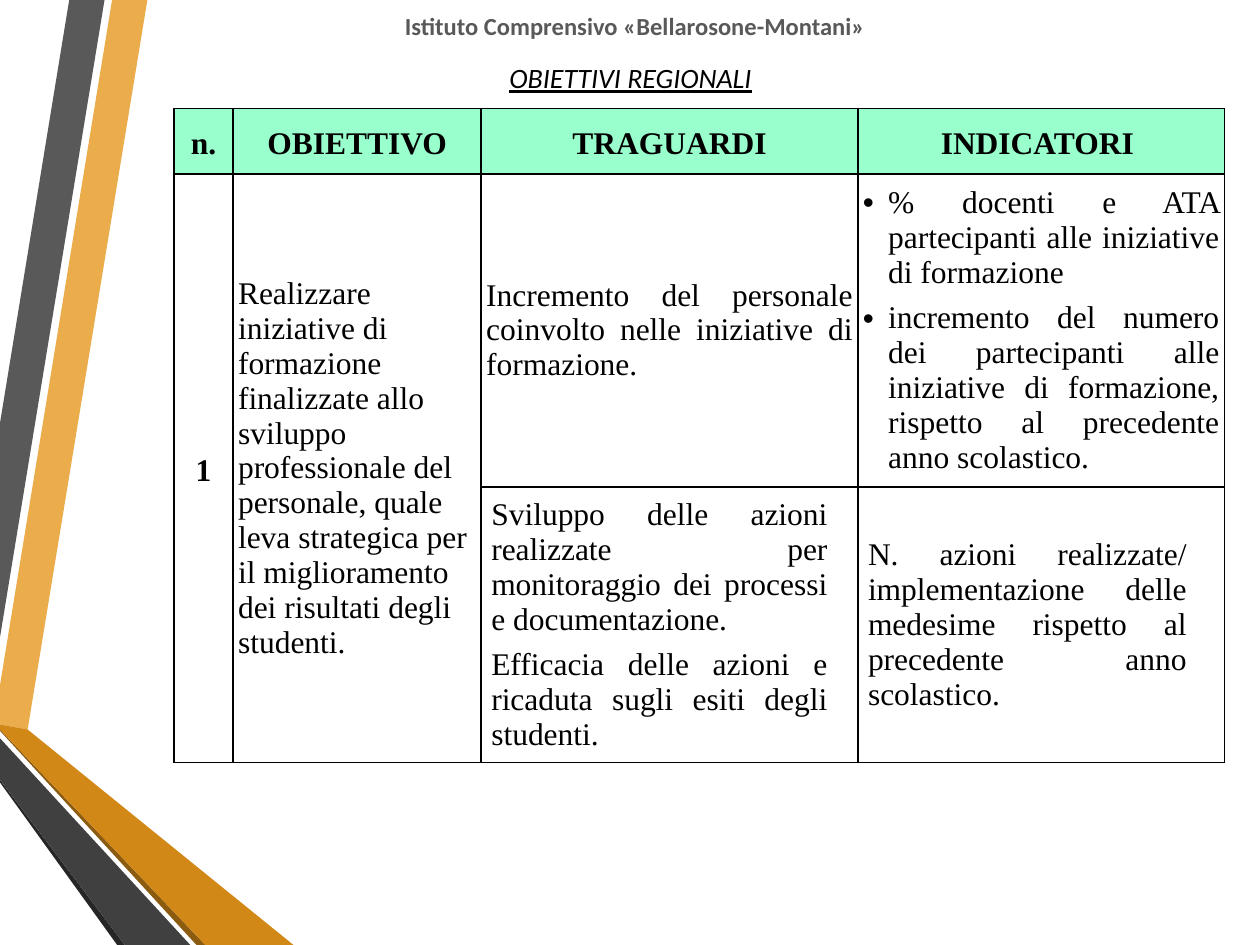
"""Builds the slide with the regional objectives, their targets and indicators."""
import pptx
import pptx.dml.color
import pptx.enum.text
import pptx.oxml
import pptx.oxml.ns
import pptx.util
from lxml import etree

Inches, Pt = pptx.util.Inches, pptx.util.Pt
RGBColor = pptx.dml.color.RGBColor
PP_ALIGN, MSO_ANCHOR = pptx.enum.text.PP_ALIGN, pptx.enum.text.MSO_ANCHOR

BLACK = RGBColor(0x00, 0x00, 0x00)
WHITE = RGBColor(0xFF, 0xFF, 0xFF)
MINT = RGBColor(0x99, 0xFF, 0xCC)
GREY = RGBColor(0x59, 0x59, 0x59)
CHARCOAL = RGBColor(0x40, 0x40, 0x40)
DARK_CHARCOAL = RGBColor(0x26, 0x26, 0x26)
LIGHT_ORANGE = RGBColor(0xEB, 0xAC, 0x4B)
ORANGE = RGBColor(0xD1, 0x88, 0x17)
BROWN = RGBColor(0x8B, 0x5B, 0x10)


def add_run(paragraph, text, font_name, size, color, bold=False):
    run = paragraph.add_run()
    run.text = text
    run.font.name = font_name
    run.font.size = Pt(size)
    run.font.color.rgb = color
    run.font.bold = bold
    return run


def add_borders(cell):
    properties = cell._tc.get_or_add_tcPr()
    for index, side in enumerate(("lnL", "lnR", "lnT", "lnB")):
        border = pptx.oxml.parse_xml(
            f'<a:{side} xmlns:a="http://schemas.openxmlformats.org/drawingml/2006/main" w="{Pt(1)}">'
            f'<a:solidFill><a:srgbClr val="{BLACK}"/></a:solidFill></a:{side}>')
        properties.insert(index, border)


presentation = pptx.Presentation()
presentation.slide_width, presentation.slide_height = Inches(10), Inches(7.5)
slide = presentation.slides.add_slide(presentation.slide_layouts[5])

ribbons = [
    (LIGHT_ORANGE, [(0, 5.44), (0, 5.75), (0.22, 5.79), (1.17, 0), (0.89, 0)]),
    (GREY, [(0.83, 0), (0.55, 0), (0, 3.36), (0, 5.06)]),
    (DARK_CHARCOAL, [(0, 6.19), (0, 6.21), (0.93, 7.5), (0.99, 7.5)]),
    (BROWN, [(0, 5.79), (0, 5.8), (1.56, 7.5), (1.63, 7.5)]),
    (ORANGE, [(0, 5.79), (1.63, 7.5), (2.33, 7.5), (0.22, 5.79), (0, 5.75)]),
    (CHARCOAL, [(0, 6.19), (0.99, 7.5), (1.51, 7.5), (0, 5.86)]),
]
for color, corners in ribbons:
    points = [(Inches(x), Inches(y)) for x, y in corners]
    builder = slide.shapes.build_freeform(*points[0])
    builder.add_line_segments(points[1:], close=True)
    ribbon = builder.convert_to_shape()
    ribbon.shadow.inherit = False
    ribbon.fill.solid()
    ribbon.fill.fore_color.rgb = color
    ribbon.line.fill.background()

title = slide.shapes.title
title.left, title.top, title.width, title.height = Inches(0.91), Inches(0.43), Inches(8.19), Inches(0.37)
title.text_frame.auto_size = pptx.enum.text.MSO_AUTO_SIZE.NONE
title.text_frame.vertical_anchor = MSO_ANCHOR.TOP
title_line = title.text_frame.paragraphs[0]
title_line.alignment = PP_ALIGN.CENTER
title_run = add_run(title_line, "OBIETTIVI REGIONALI", "Calibri", 16, BLACK)
title_run.font.italic = True
title_run.font.underline = True

school = slide.shapes.add_textbox(Inches(1.14), Inches(0.04), Inches(7.8), Inches(0.34))
school.text_frame.word_wrap = True
school_line = school.text_frame.paragraphs[0]
school_line.alignment = PP_ALIGN.CENTER
add_run(school_line, "Istituto Comprensivo «Bellarosone-Montani»", "Calibri", 14, GREY, bold=True)

column_widths = [0.47, 1.97, 2.99, 2.91]
row_heights = [0.52, 2.48, 2.19]
objectives = slide.shapes.add_table(
    len(row_heights), len(column_widths), Inches(1.38), Inches(0.86),
    Inches(sum(column_widths)), Inches(sum(row_heights))).table
objectives.first_row = False
objectives.horz_banding = False
for column, width in zip(objectives.columns, column_widths):
    column.width = Inches(width)
for row, height in zip(objectives.rows, row_heights):
    row.height = Inches(height)

for row_index in range(len(row_heights)):
    for column_index in range(len(column_widths)):
        cell = objectives.cell(row_index, column_index)
        cell.vertical_anchor = MSO_ANCHOR.MIDDLE
        cell.margin_left = cell.margin_right = Inches(0.04)
        cell.margin_top = cell.margin_bottom = 0
        cell.fill.solid()
        cell.fill.fore_color.rgb = MINT if row_index == 0 else WHITE
        add_borders(cell)
for column_index in (0, 1):
    objectives.cell(1, column_index).merge(objectives.cell(2, column_index))

labels = [(0, 0, "n."), (0, 1, "OBIETTIVO"), (0, 2, "TRAGUARDI"), (0, 3, "INDICATORI "), (1, 0, "1")]
for row_index, column_index, text in labels:
    paragraph = objectives.cell(row_index, column_index).text_frame.paragraphs[0]
    paragraph.alignment = PP_ALIGN.CENTER
    paragraph.line_spacing = 1.15
    add_run(paragraph, text, "Times New Roman", 18, BLACK, bold=True)

LEFT, JUSTIFY = PP_ALIGN.LEFT, PP_ALIGN.JUSTIFY
details = [
    (1, 1, LEFT, 0, 0, False, [
        "Realizzare iniziative di formazione finalizzate allo sviluppo professionale del personale, "
        "quale leva strategica per il miglioramento dei risultati degli studenti."]),
    (1, 2, JUSTIFY, 0, 0, False, [
        "Incremento del personale coinvolto nelle iniziative di formazione."]),
    (1, 3, JUSTIFY, 0.2, 0, True, [
        "% docenti e ATA partecipanti alle iniziative di formazione ",
        "incremento del numero dei partecipanti alle iniziative di formazione, "
        "rispetto al precedente anno scolastico."]),
    (2, 2, JUSTIFY, 0.04, 0.2, False, [
        "Sviluppo delle azioni realizzate per monitoraggio dei processi e documentazione.",
        "Efficacia delle azioni e ricaduta sugli esiti degli studenti."]),
    (2, 3, JUSTIFY, 0.04, 0.26, False, [
        "N. azioni realizzate/ implementazione delle medesime rispetto al precedente anno scolastico."]),
]
for row_index, column_index, alignment, left_indent, right_indent, bulleted, texts in details:
    frame = objectives.cell(row_index, column_index).text_frame
    for index, text in enumerate(texts):
        paragraph = frame.add_paragraph() if index else frame.paragraphs[0]
        paragraph.alignment = alignment
        paragraph.space_after = Pt(6)
        properties = paragraph._p.get_or_add_pPr()
        properties.set("marL", str(Inches(left_indent)))
        properties.set("marR", str(Inches(right_indent)))
        if bulleted:
            properties.set("indent", str(-Inches(left_indent)))
            bullet_font = etree.SubElement(properties, pptx.oxml.ns.qn("a:buFont"))
            bullet_font.set("typeface", "Arial")
            etree.SubElement(properties, pptx.oxml.ns.qn("a:buChar")).set("char", "•")
        add_run(paragraph, text, "Times New Roman", 18, BLACK)

presentation.save("out.pptx")
